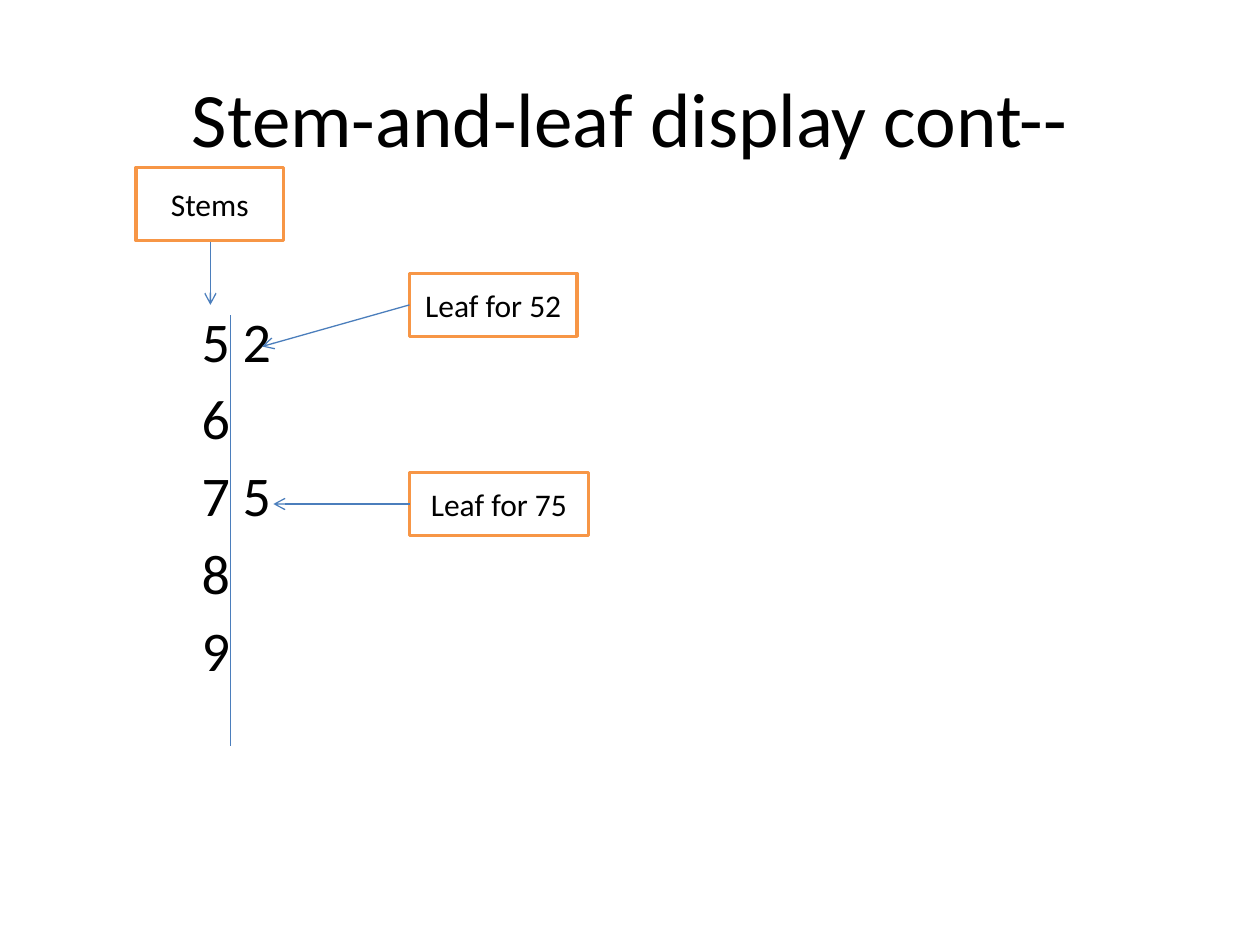
import pptx
import pptx.util
import pptx.dml.color
import pptx.enum.text
import pptx.enum.shapes
import pptx.oxml
import pptx.oxml.ns
import lxml.etree

Inches = pptx.util.Inches
Pt = pptx.util.Pt
ALIGN = pptx.enum.text.PP_ALIGN
MIDDLE = pptx.enum.text.MSO_ANCHOR.MIDDLE
BLACK, WHITE, BLUE, ORANGE = "000000", "FFFFFF", "4B7EBC", "F79646"


def color(code):
    return pptx.dml.color.RGBColor.from_string(code)


def apply(item, form):
    for name, value in form.items():
        setattr(item, name, value)


def write(frame, lines, size, align, gap=0, **form):
    apply(frame, {"word_wrap": True, **form})
    for i, line in enumerate(lines):
        para = frame.paragraphs[0] if i == 0 else frame.add_paragraph()
        apply(para, {"text": line, "alignment": align,
                     "space_before": Pt(gap if i else 0)})
        apply(para.runs[0].font, {"name": "Calibri", "size": Pt(size)})
        para.runs[0].font.color.rgb = color(BLACK)


def place_title(slide, box, text):
    title = slide.shapes.title
    apply(title, dict(zip(("left", "top", "width", "height"), map(Inches, box))))
    write(title.text_frame, [text], 44, ALIGN.CENTER, vertical_anchor=MIDDLE)


def draw_line(slide, start, end, arrow=False):
    line = slide.shapes.add_connector(
        pptx.enum.shapes.MSO_CONNECTOR.STRAIGHT, *map(Inches, (*start, *end)))
    line.line.color.rgb = color(BLUE)
    line.line.width = Pt(0.75)
    qn = pptx.oxml.ns.qn
    props = line._element.spPr
    if arrow:
        lxml.etree.SubElement(props.find(qn("a:ln")), qn("a:tailEnd"), type="arrow")
    lxml.etree.SubElement(props, qn("a:effectLst"))


def place_plot(slide, box, rows):
    left, top, width, height = box
    body = slide.shapes.add_textbox(*map(Inches, box))
    write(body.text_frame, rows, 32, ALIGN.LEFT, gap=5.75,
          margin_left=Inches(1.1), margin_top=Inches(0.68))
    draw_line(slide, (left + 1.33, top + 0.75), (left + 1.33, top + 4.17))


def place_label(slide, box, text, start, end):
    label = slide.shapes.add_shape(
        pptx.enum.shapes.MSO_SHAPE.RECTANGLE, *map(Inches, box))
    label.shadow.inherit = False
    label.fill.solid()
    label.fill.fore_color.rgb = color(WHITE)
    label.line.color.rgb = color(ORANGE)
    label.line.width = Pt(2)
    write(label.text_frame, [text], 18, ALIGN.CENTER, vertical_anchor=MIDDLE)
    draw_line(slide, start, end, arrow=True)


def main():
    deck = pptx.Presentation()
    apply(deck, {"slide_width": Inches(10), "slide_height": Inches(7.5)})
    slide = deck.slides.add_slide(deck.slide_layouts[5])
    place_title(slide, (0.5, 0.3, 9, 1.25), "Stem-and-leaf display cont--")
    place_plot(slide, (0.5, 1.75, 9, 4.95), ["5 2", "6", "7 5", "8", "9"])
    labels = [
        ((3.25, 2.17, 1.33, 0.5), "Leaf for 52", (3.25, 2.42), (2.08, 2.75)),
        ((1.08, 1.33, 1.17, 0.58), "Stems", (1.67, 1.92), (1.67, 2.42)),
        ((3.25, 3.75, 1.42, 0.5), "Leaf for 75", (3.25, 4), (2.17, 4)),
    ]
    for label in labels:
        place_label(slide, *label)
    deck.save("out.pptx")


if __name__ == "__main__":
    main()
